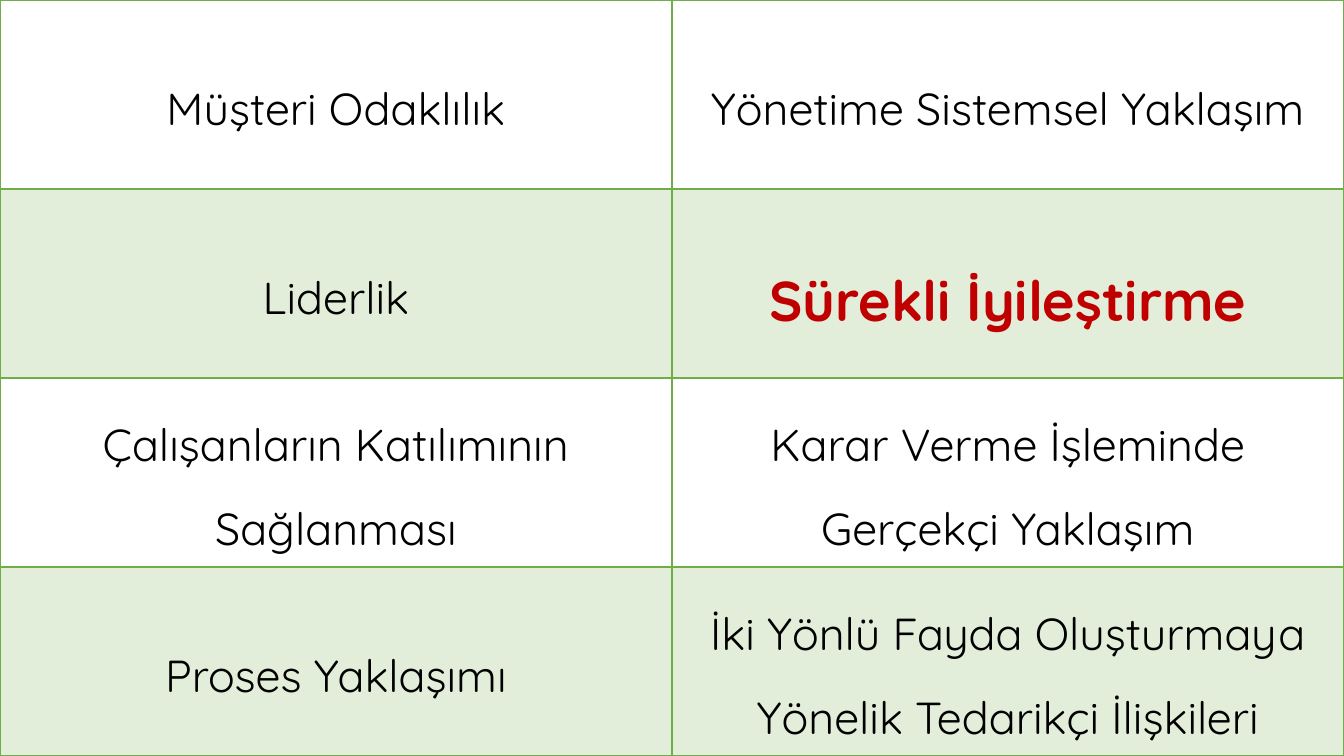
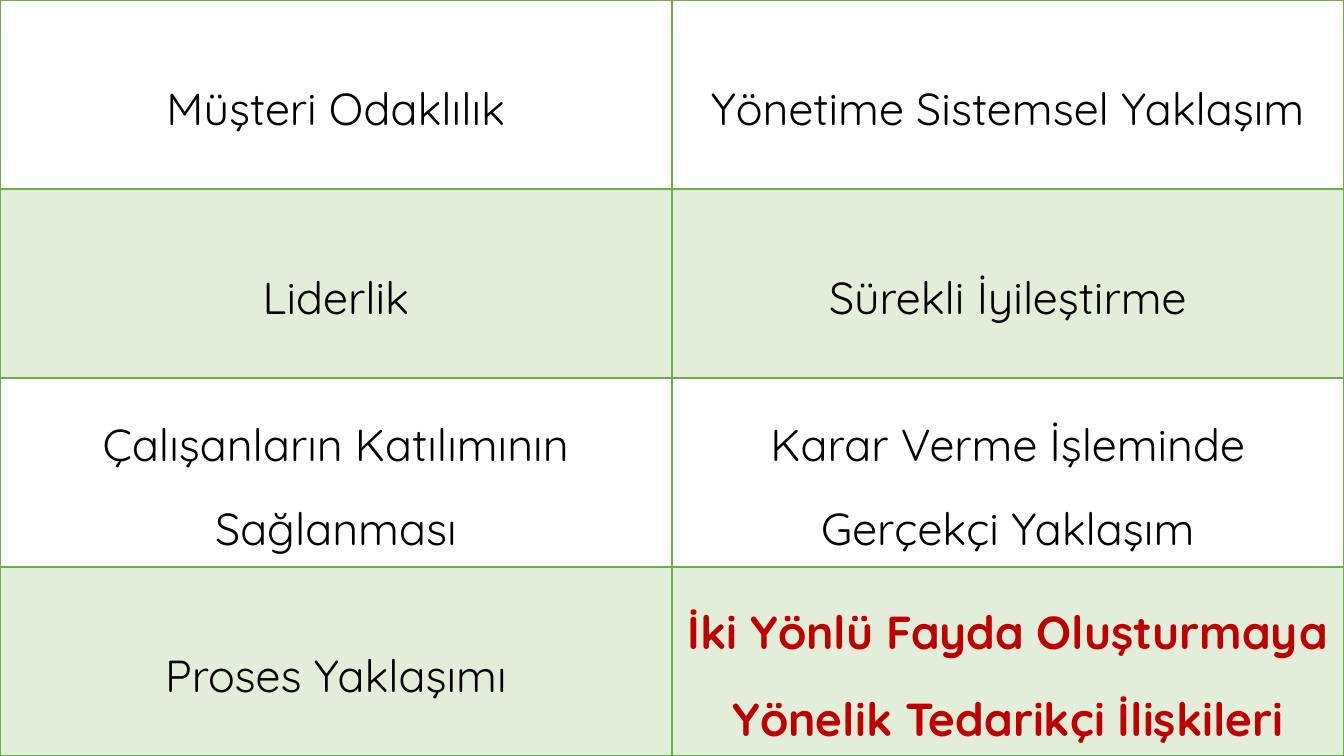
from dataclasses import dataclass

from lxml.etree import SubElement
from pptx import Presentation
from pptx.dml.color import RGBColor
from pptx.enum.text import MSO_ANCHOR, PP_ALIGN
from pptx.oxml import parse_xml
from pptx.oxml.ns import nsdecls, qn
from pptx.slide import Slide
from pptx.table import _Cell
from pptx.util import Emu, Pt

SCALE = 914400 / 100.8
SLIDE_W, SLIDE_H = 1344, 756
FONT = "Quicksand"
GREEN, RED, BLACK = "70AD47", "C00000", "000000"
BAND_ALPHA = 20
BODY_SIZE = 32
BORDER_PT = 1

PRINCIPLES = [
    ("Müşteri Odaklılık", "Yönetime Sistemsel Yaklaşım"),
    ("Liderlik", "Sürekli İyileştirme"),
    ("Çalışanların Katılımının Sağlanması", "Karar Verme İşleminde Gerçekçi Yaklaşım"),
    ("Proses Yaklaşımı", "İki Yönlü Fayda Oluşturmaya Yönelik Tedarikçi İlişkileri"),
]


@dataclass(frozen=True)
class Highlight:
    row: int
    col: int
    size: int


HIGHLIGHTS = [Highlight(row=1, col=1, size=40), Highlight(row=3, col=1, size=33)]


def px(n: int) -> Emu:
    return Emu(round(n * SCALE))


def rgb(code: str) -> RGBColor:
    return RGBColor.from_string(code)


def fill_cell(cell: _Cell, banded: bool) -> None:
    if not banded:
        cell.fill.background()
        return
    cell.fill.solid()
    cell.fill.fore_color.rgb = rgb(GREEN)
    color = cell._tc.tcPr.find(f"{qn('a:solidFill')}/{qn('a:srgbClr')}")
    SubElement(color, qn("a:alpha"), val=str(BAND_ALPHA * 1000))


def set_borders(cell: _Cell) -> None:
    for i, side in enumerate("LRTB"):
        cell._tc.tcPr.insert(i, parse_xml(
            f'<a:ln{side} {nsdecls("a")} w="{Pt(BORDER_PT)}"><a:solidFill>'
            f'<a:srgbClr val="{GREEN}"/></a:solidFill></a:ln{side}>'))


def write_cell(cell: _Cell, text: str, size: int, color: str, bold: bool) -> None:
    cell.vertical_anchor = MSO_ANCHOR.MIDDLE
    p = cell.text_frame.paragraphs[0]
    p.text = text
    p.alignment = PP_ALIGN.CENTER
    p.line_spacing = 1.5
    font = p.runs[0].font
    font.name, font.size, font.bold = FONT, Pt(size), bold
    font.color.rgb = rgb(color)


def add_principles(s: Slide, highlight: Highlight) -> None:
    rows, cols = len(PRINCIPLES), len(PRINCIPLES[0])
    table = s.shapes.add_table(rows, cols, px(0), px(0), px(SLIDE_W), px(SLIDE_H)).table
    table.first_row = table.horz_banding = False
    for column in table.columns:
        column.width = px(SLIDE_W // cols)
    for r, texts in enumerate(PRINCIPLES):
        table.rows[r].height = px(SLIDE_H // rows)
        for c, text in enumerate(texts):
            cell = table.cell(r, c)
            fill_cell(cell, banded=r % 2 == 1)
            set_borders(cell)
            if (r, c) == (highlight.row, highlight.col):
                write_cell(cell, text, highlight.size, RED, True)
            else:
                write_cell(cell, text, BODY_SIZE, BLACK, False)


def main() -> None:
    prs = Presentation()
    prs.slide_width, prs.slide_height = px(SLIDE_W), px(SLIDE_H)
    for highlight in HIGHLIGHTS:
        add_principles(prs.slides.add_slide(prs.slide_layouts[6]), highlight)
    prs.save("out.pptx")


if __name__ == "__main__":
    main()
